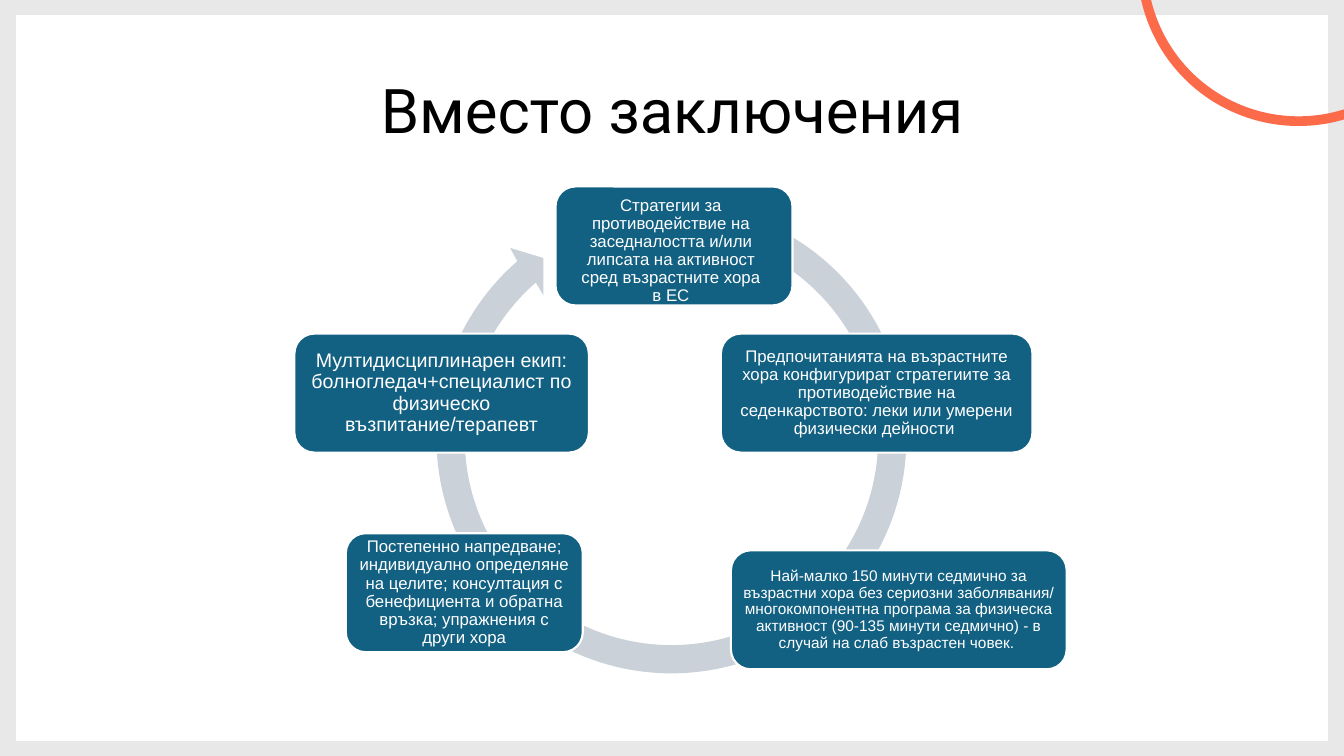
from math import cos, sin, tan, radians
from lxml import etree
from pptx import Presentation
from pptx.util import Inches, Pt
from pptx.dml.color import RGBColor
from pptx.enum import shapes, text
from pptx.oxml.ns import qn

GREY = RGBColor(0xE8, 0xE8, 0xE8)
WHITE = RGBColor(0xFF, 0xFF, 0xFF)
BLACK = RGBColor(0, 0, 0)
CORAL = RGBColor(0xFB, 0x6B, 0x49)
STEEL = RGBColor(0xCA, 0xD1, 0xD8)
TEAL = RGBColor(0x12, 0x60, 0x82)
KIND = shapes.MSO_SHAPE

deck = Presentation()
deck.slide_width, deck.slide_height = Inches(13.33), Inches(7.5)
slide = deck.slides.add_slide(deck.slide_layouts[6])
slide.background.fill.solid()
slide.background.fill.fore_color.rgb = GREY


def paint(shape, fill):
    shape.shadow.inherit = False
    shape.fill.solid()
    shape.fill.fore_color.rgb = fill
    shape.line.fill.background()


def write(shape, words, font, size, color, pads):
    frame = shape.text_frame
    frame.text = words
    frame.word_wrap = True
    frame.vertical_anchor = text.MSO_ANCHOR.MIDDLE
    (frame.margin_left, frame.margin_top,
     frame.margin_right, frame.margin_bottom) = [Inches(p) for p in pads]
    para = frame.paragraphs[0]
    para.alignment = text.PP_ALIGN.CENTER
    para.line_spacing = 0.9
    face = para.runs[0].font
    face.name, face.size, face.color.rgb = font, Pt(size), color


# White panel and corner ring
panel = slide.shapes.add_shape(KIND.RECTANGLE, Inches(0.16), Inches(0.15),
                               Inches(13.01), Inches(7.2))
paint(panel, WHITE)
ring = slide.shapes.add_shape(KIND.DONUT, Inches(11.28), Inches(-1.95),
                              Inches(3.2), Inches(3.2))
ring.adjustments[0] = 0.03
paint(ring, CORAL)

# Title
title = slide.shapes.add_textbox(Inches(0.92), Inches(0.4),
                                 Inches(11.5), Inches(1.45))
write(title, "Вместо заключения", "Roboto", 44, BLACK, (0.1, 0.05, 0.1, 0.05))

# Circular arrow: each arc is a chain of Bezier curves, three points a curve
MID_X, MID_Y = 6.66, 4.35
START, END, CURVES = -70, 229, 5
step = (END - START) / CURVES
pull = 4 / 3 * tan(radians(step / 4))
arcs = []
for radius, first, sweep in ((2.33, START, step), (2.05, END, -step)):
    arc = []
    for i in range(CURVES + 1):
        turn = radians(first + i * sweep)
        bend = pull if sweep > 0 else -pull
        for lean in (-bend, 0, bend):
            arc.append((MID_X + radius * (cos(turn) - lean * sin(turn)),
                        MID_Y + radius * (sin(turn) + lean * cos(turn))))
    arcs.append(arc[1:-1])
outer, inner = arcs
head = [(5.06, 2.46), (5.39, 2.56), (5.39, 2.93)]
spots = [(Inches(x), Inches(y)) for x, y in outer + head + inner]
pen = slide.shapes.build_freeform(*spots[0])
pen.add_line_segments(spots[1:], close=True)
arrow = pen.convert_to_shape()
paint(arrow, STEEL)
lines = list(arrow.element.iter(qn("a:lnTo")))
span = 3 * CURVES
back = span + len(head) + 1
for start in [*range(0, span, 3), *range(back, back + span, 3)]:
    curve = etree.Element(qn("a:cubicBezTo"))
    lines[start].addprevious(curve)
    for line in lines[start:start + 3]:
        curve.append(line[0])
        line.getparent().remove(line)

# Steps of the cycle: left, top, width, text size, insets, words
EVEN = (0.05, 0.05, 0.05, 0.05)
steps = [
    (5.51, 1.85, 2.35, 12, (0.16, 0.19, 0.22, 0.09),
     "Стратегии за противодействие на заседналостта и/или липсата на "
     "активност сред възрастните хора в ЕС"),
    (7.15, 3.31, 3.09, 12, EVEN,
     "Предпочитанията на възрастните хора конфигурират стратегиите за "
     "противодействие на седенкарството: леки или умерени физически дейности "),
    (7.25, 5.46, 3.33, 11, EVEN,
     "Най-малко 150 минути седмично за възрастни хора без сериозни "
     "заболявания/ многокомпонентна програма за физическа активност "
     "(90-135 минути седмично) - в случай на слаб възрастен човек. "),
    (3.43, 5.29, 2.35, 12, EVEN,
     "Постепенно напредване; индивидуално определяне на целите; консултация "
     "с бенефициента и обратна връзка; упражнения с други хора"),
    (2.92, 3.31, 2.92, 14, EVEN,
     "Мултидисциплинарен екип: болногледач+специалист по физическо "
     "възпитание/терапевт"),
]
for left, top, width, size, pads, words in steps:
    box = slide.shapes.add_shape(KIND.ROUNDED_RECTANGLE, Inches(left),
                                 Inches(top), Inches(width), Inches(1.18))
    paint(box, TEAL)
    box.line.color.rgb = WHITE
    box.line.width = Pt(1.5)
    write(box, words, "Arial", size, WHITE, pads)

deck.save("out.pptx")
